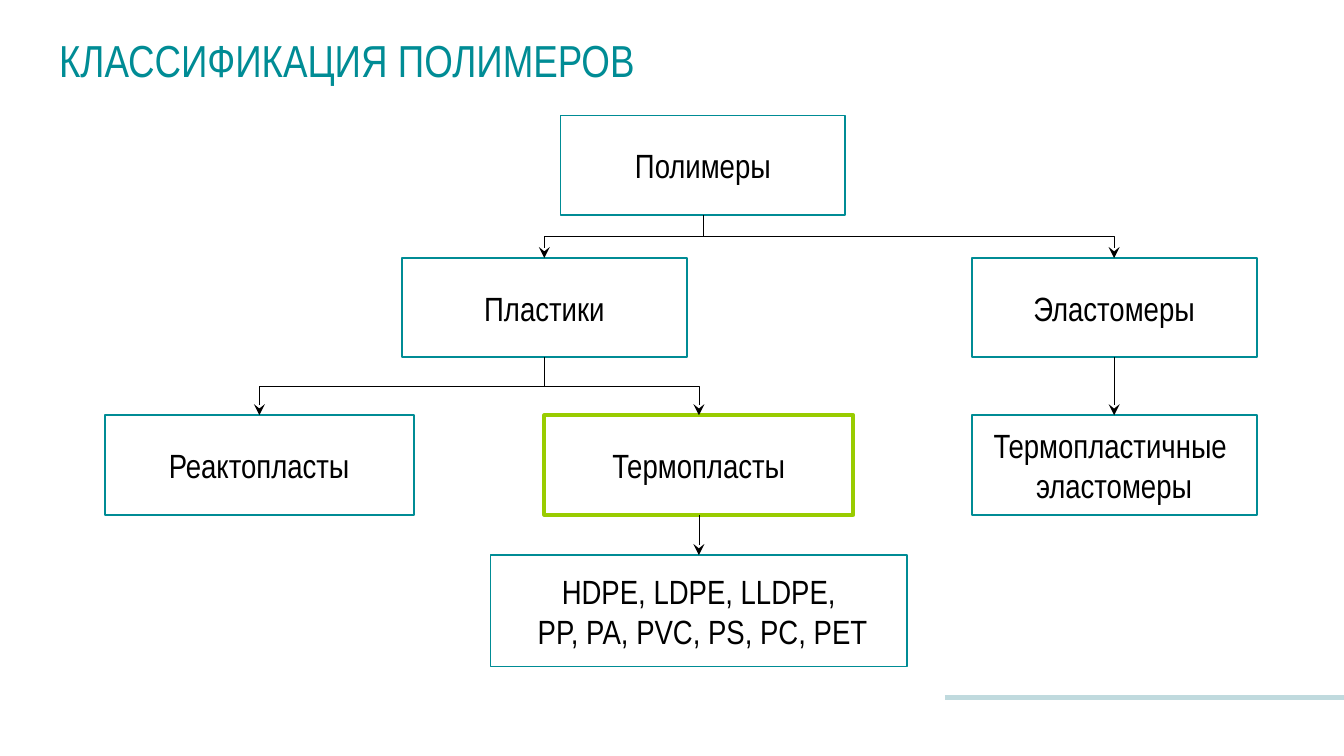
"""Build a slide with a tree diagram that classifies polymers."""
from dataclasses import dataclass

import pptx
import pptx.dml.color
import pptx.enum.shapes
import pptx.enum.text
import pptx.oxml
import pptx.oxml.ns
import pptx.util
from pptx.util import Inches

RGBColor = pptx.dml.color.RGBColor
TEAL = RGBColor(0x00, 0x8C, 0x95)
LIME = RGBColor(0x99, 0xCC, 0x00)
PALE_BLUE = RGBColor(0xC0, 0xDA, 0xDE)
BLACK = RGBColor(0x00, 0x00, 0x00)
WHITE = RGBColor(0xFF, 0xFF, 0xFF)

FONT = "Arial Narrow"
CONNECTOR = pptx.enum.shapes.MSO_CONNECTOR
BOTTOM, TOP = 2, 0
PAGE_WIDTH = 10
PAGE_HEIGHT = PAGE_WIDTH * 9 / 16


@dataclass(frozen=True)
class Node:
    text: str
    center: float
    top: float
    width: float = 2.12
    height: float = 0.74
    highlighted: bool = False


POLYMERS = Node("Полимеры", 5.23, 0.86)
PLASTICS = Node("Пластики", 4.05, 1.92)
ELASTOMERS = Node("Эластомеры", 8.29, 1.92)
THERMOSETS = Node("Реактопласты", 1.93, 3.09, width=2.3)
THERMOPLASTICS = Node("Термопласты", 5.2, 3.09, width=2.3, highlighted=True)
THERMOPLASTIC_ELASTOMERS = Node("Термопластичные \nэластомеры", 8.29, 3.09)
EXAMPLES = Node("HDPE, LDPE, LLDPE,\n PP, PA, PVC, PS, PC, PET", 5.2, 4.13, width=3.1, height=0.83)

BRANCHES = {
    POLYMERS: (PLASTICS, ELASTOMERS),
    PLASTICS: (THERMOSETS, THERMOPLASTICS),
    ELASTOMERS: (THERMOPLASTIC_ELASTOMERS,),
    THERMOPLASTICS: (EXAMPLES,),
}
NODES = (POLYMERS, PLASTICS, ELASTOMERS, THERMOSETS, THERMOPLASTICS,
         THERMOPLASTIC_ELASTOMERS, EXAMPLES)


def write_text(frame, text: str, *, size: float, color: RGBColor, align=None) -> None:
    frame.word_wrap = True
    frame.text = text
    for para in frame.paragraphs:
        para.alignment = align
        for span in para.runs:
            span.font.name = FONT
            span.font.size = pptx.util.Pt(size)
            span.font.color.rgb = color


def add_title(page, text: str) -> None:
    box = page.shapes.add_textbox(Inches(0.44), Inches(0.24), Inches(5.03), Inches(0.52))
    frame = box.text_frame
    frame.margin_left = frame.margin_right = frame.margin_top = frame.margin_bottom = 0
    write_text(frame, text, size=24, color=TEAL)


def add_node(page, node: Node):
    box = page.shapes.add_shape(
        pptx.enum.shapes.MSO_SHAPE.RECTANGLE, Inches(node.center - node.width / 2),
        Inches(node.top), Inches(node.width), Inches(node.height))
    box.shadow.inherit = False
    if node.highlighted:
        box.fill.solid()
        box.fill.fore_color.rgb = WHITE
    else:
        box.fill.background()
    box.line.color.rgb = LIME if node.highlighted else TEAL
    box.line.width = pptx.util.Pt(2 if node.highlighted else 1)
    box.text_frame.vertical_anchor = pptx.enum.text.MSO_ANCHOR.MIDDLE
    write_text(box.text_frame, node.text, size=18, color=BLACK,
               align=pptx.enum.text.PP_ALIGN.CENTER)
    return box


def style_line(connector, color: RGBColor, width: float, arrow: bool = False) -> None:
    connector.line.color.rgb = color
    connector.line.width = pptx.util.Pt(width)
    if arrow:
        head = pptx.oxml.parse_xml(
            f'<a:tailEnd {pptx.oxml.ns.nsdecls("a")} type="stealth"/>')
        connector.line._get_or_add_ln().append(head)
    connector._element.spPr.append(
        pptx.oxml.parse_xml(f'<a:effectLst {pptx.oxml.ns.nsdecls("a")}/>'))


def add_straight_arrow(page, parent_box, child_box) -> None:
    arrow = page.shapes.add_connector(CONNECTOR.STRAIGHT, 0, 0, 0, 0)
    arrow.begin_connect(parent_box, BOTTOM)
    arrow.end_connect(child_box, TOP)
    style_line(arrow, BLACK, 0.25, arrow=True)


def add_elbow_arrow(page, parent: Node, child: Node) -> None:
    start = parent.top + parent.height
    middle_x = (parent.center + child.center) / 2
    middle_y = (start + child.top) / 2
    half_run = abs(child.center - parent.center) / 2
    half_drop = (child.top - start) / 2
    rightward = child.center > parent.center
    side = half_drop if rightward else -half_drop
    arrow = page.shapes.add_connector(
        CONNECTOR.ELBOW, Inches(middle_x + side), Inches(middle_y - half_run),
        Inches(middle_x - side), Inches(middle_y + half_run))
    arrow.rotation = 270 if rightward else 90
    style_line(arrow, BLACK, 0.25, arrow=True)


def main() -> None:
    deck = pptx.Presentation()
    deck.slide_width, deck.slide_height = Inches(PAGE_WIDTH), Inches(PAGE_HEIGHT)
    page = deck.slides.add_slide(deck.slide_layouts[6])

    rule = page.shapes.add_connector(
        CONNECTOR.STRAIGHT, Inches(7.03), Inches(5.19), Inches(PAGE_WIDTH), Inches(5.19))
    style_line(rule, PALE_BLUE, 2.75)
    add_title(page, "КЛАССИФИКАЦИЯ ПОЛИМЕРОВ")

    boxes = {node: add_node(page, node) for node in NODES}
    for parent, children in BRANCHES.items():
        for child in children:
            if child.center == parent.center:
                add_straight_arrow(page, boxes[parent], boxes[child])
            else:
                add_elbow_arrow(page, parent, child)
    deck.save("out.pptx")


if __name__ == "__main__":
    main()
